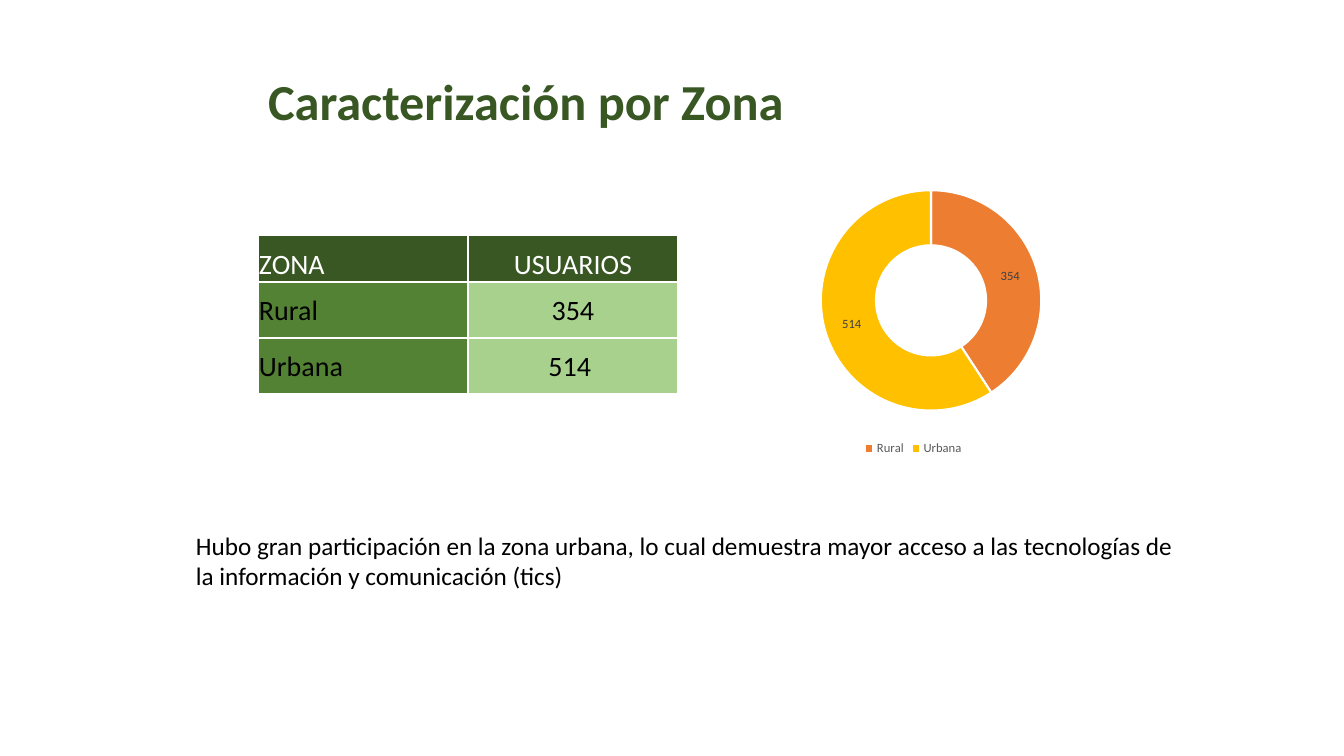
from lxml.etree import SubElement
from pptx import Presentation
from pptx.chart.data import CategoryChartData
from pptx.dml.color import RGBColor
from pptx.enum.chart import XL_CHART_TYPE, XL_LEGEND_POSITION
from pptx.enum.text import MSO_ANCHOR, MSO_AUTO_SIZE, PP_ALIGN
from pptx.oxml import parse_xml
from pptx.oxml.ns import nsdecls, qn
from pptx.util import Emu, Pt

FONT = "Calibri"
DARK_GREEN = "385723"
MID_GREEN = "548235"
LIGHT_GREEN = "A9D18E"
WHITE = "FFFFFF"
BLACK = "000000"
ZONES = [("Rural", 354, "ED7D31"), ("Urbana", 514, "FFC000")]


def px(length):
    return Emu(round(length * 914400 / 100.8))


def color(hex_string):
    return RGBColor.from_string(hex_string)


def style_font(font, size, hex_string, bold=False):
    font.name = FONT
    font.size = Pt(size)
    font.bold = bold
    font.color.rgb = color(hex_string)


def write_text(text_frame, text, size, hex_string, bold=False, alignment=PP_ALIGN.LEFT):
    paragraph = text_frame.paragraphs[0]
    paragraph.alignment = alignment
    run = paragraph.add_run()
    run.text = text
    style_font(run.font, size, hex_string, bold)


def fill_text_shape(shape, box, text, size, hex_string, bold=False):
    shape.left, shape.top, shape.width, shape.height = map(px, box)
    text_frame = shape.text_frame
    text_frame.word_wrap = True
    text_frame.auto_size = MSO_AUTO_SIZE.SHAPE_TO_FIT_TEXT
    text_frame.vertical_anchor = MSO_ANCHOR.TOP
    write_text(text_frame, text, size, hex_string, bold)


def add_cell_borders(cell):
    properties = cell._tc.get_or_add_tcPr()
    for side in ("lnL", "lnR", "lnT", "lnB"):
        line = SubElement(properties, qn(f"a:{side}"), w=str(Pt(1)))
        fill = SubElement(line, qn("a:solidFill"))
        SubElement(fill, qn("a:srgbClr"), val=WHITE)


def fill_cell(cell, text, fill, text_color, anchor, alignment):
    add_cell_borders(cell)
    cell.fill.solid()
    cell.fill.fore_color.rgb = color(fill)
    cell.margin_left = cell.margin_right = cell.margin_top = px(1)
    cell.margin_bottom = 0
    cell.vertical_anchor = anchor
    write_text(cell.text_frame, text, 20, text_color, alignment=alignment)


def add_zone_table(slide):
    rows = [("ZONA", "USUARIOS"), ("Rural", "354"), ("Urbana", "514 ")]
    heights = [47, 56, 56]
    table = slide.shapes.add_table(3, 2, px(258), px(235), px(420), px(sum(heights))).table
    table.horz_banding = False
    for column in table.columns:
        column.width = px(210)
    for row_index, (texts, height) in enumerate(zip(rows, heights)):
        table.rows[row_index].height = px(height)
        header = row_index == 0
        fills = (DARK_GREEN, DARK_GREEN) if header else (MID_GREEN, LIGHT_GREEN)
        anchor = MSO_ANCHOR.BOTTOM if header else MSO_ANCHOR.MIDDLE
        for column_index, alignment in enumerate((PP_ALIGN.LEFT, PP_ALIGN.CENTER)):
            fill_cell(table.cell(row_index, column_index), texts[column_index],
                      fills[column_index], WHITE if header else BLACK, anchor, alignment)


def set_plot_layout(chart, x, y, width, height):
    plot_area = chart._chartSpace.chart.plotArea
    for layout in plot_area.findall(qn("c:layout")):
        plot_area.remove(layout)
    plot_area.insert(0, parse_xml(
        f'<c:layout {nsdecls("c")}><c:manualLayout><c:layoutTarget val="inner"/>'
        '<c:xMode val="edge"/><c:yMode val="edge"/>'
        f'<c:x val="{x}"/><c:y val="{y}"/><c:w val="{width}"/><c:h val="{height}"/>'
        '</c:manualLayout></c:layout>'))
    plot_area.find(".//" + qn("c:holeSize")).set("val", "75")


def add_zone_chart(slide):
    data = CategoryChartData()
    data.categories = [name for name, _, _ in ZONES]
    data.add_series("Usuarios", [users for _, users, _ in ZONES])
    chart = slide.shapes.add_chart(
        XL_CHART_TYPE.DOUGHNUT, px(620), px(170), px(587), px(290), data).chart
    style_font(chart.font, 10, BLACK)
    chart.has_title = False
    chart.has_legend = True
    chart.legend.position = XL_LEGEND_POSITION.BOTTOM
    chart.legend.include_in_layout = False
    style_font(chart.legend.font, 9, "595959")
    set_plot_layout(chart, 0.32, 0.07, 0.42, 0.76)
    plot = chart.plots[0]
    plot.vary_by_categories = True
    series = plot.series[0]
    for index, (_, _, slice_color) in enumerate(ZONES):
        slice_format = series.points[index].format
        slice_format.fill.solid()
        slice_format.fill.fore_color.rgb = color(slice_color)
        slice_format.line.color.rgb = color(WHITE)
        slice_format.line.width = Pt(1.5)
    labels = series.data_labels
    labels.show_value = True
    labels.show_percentage = False
    style_font(labels.font, 9, "404040")


def main():
    presentation = Presentation()
    presentation.slide_width = px(1344)
    presentation.slide_height = px(756)
    slide = presentation.slides.add_slide(presentation.slide_layouts[5])
    fill_text_shape(slide.shapes.title, (258, 65, 651, 72),
                    "Caracterización por Zona", 36, DARK_GREEN, bold=True)
    add_zone_chart(slide)
    add_zone_table(slide)
    box = (186, 525, 1002, 72)
    comment = slide.shapes.add_textbox(*map(px, box))
    fill_text_shape(comment, box,
                    "Hubo gran participación en la zona urbana, lo cual demuestra mayor acceso "
                    "a las tecnologías de la información y comunicación (tics)", 18, BLACK)
    presentation.save("out.pptx")


if __name__ == "__main__":
    main()
